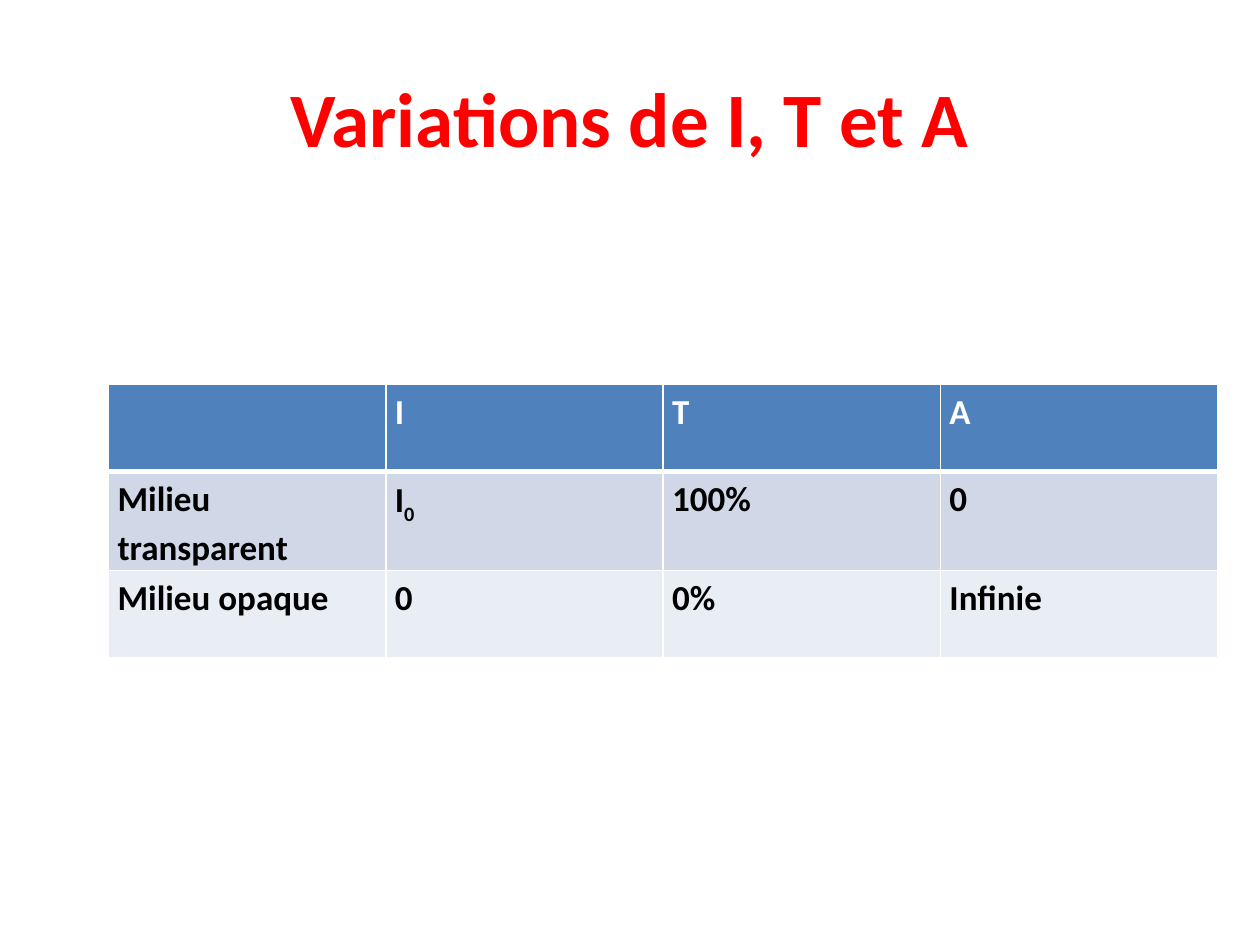
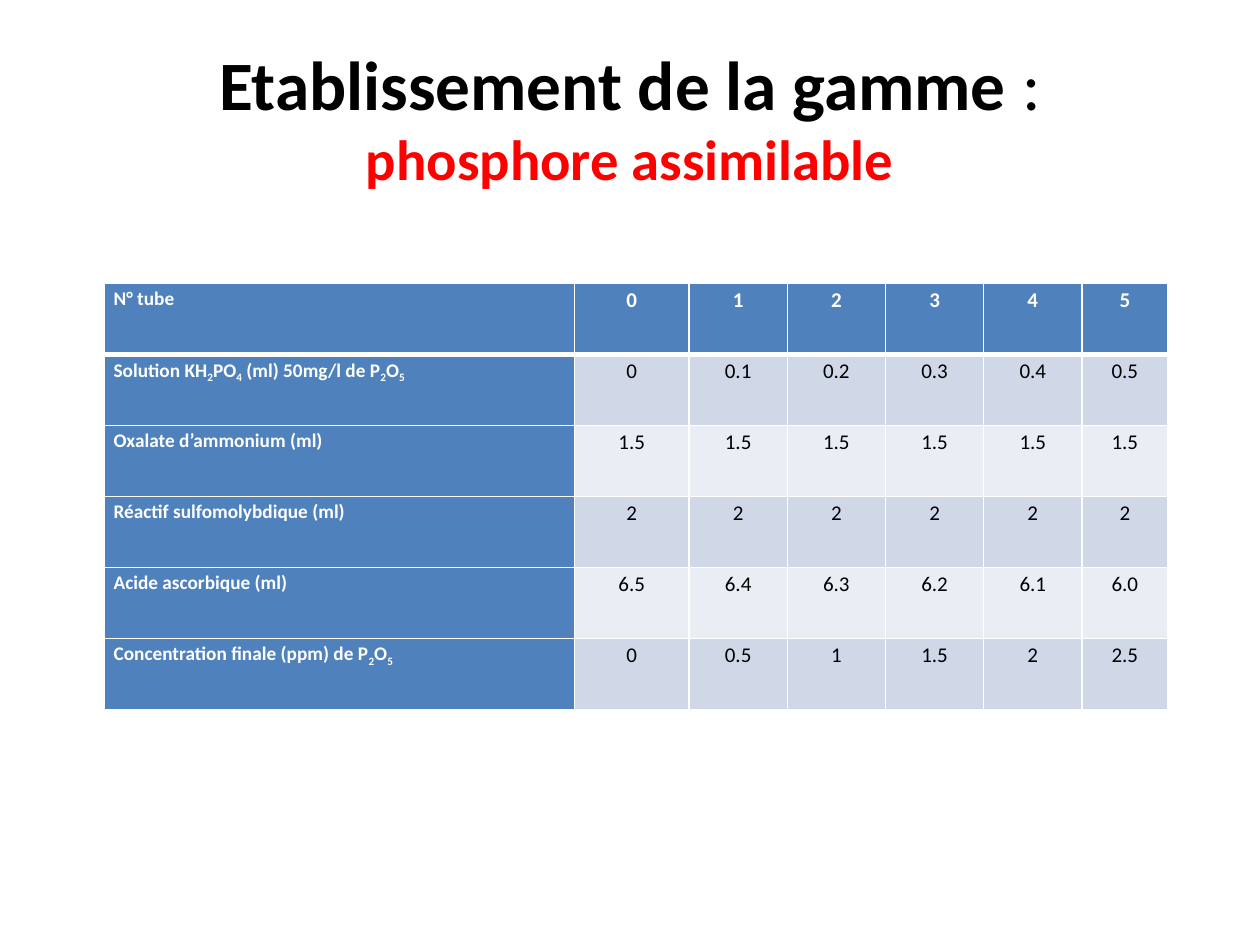
import copy

import pptx
import pptx.dml.color
import pptx.enum.text
import pptx.oxml
import pptx.oxml.ns
import pptx.util

Cm, Pt = pptx.util.Cm, pptx.util.Pt
ALIGN = pptx.enum.text.PP_ALIGN

# Shared look
FONT = "Calibri"
COLORS = {"red": "FF0000", "black": "000000", "white": "FFFFFF",
          "header": "4F81BD", "odd": "D0D8E8", "even": "E9EDF4"}
TITLE_BOX = (1.27, 0.76, 22.86, 3.18)  # left, top, width, height in cm

# Content: title lines hold (text, size, colour, bold) runs;
# in table text, "_" lowers the character that follows it
SLIDES = [
    {
        "title": [[("Variations de I, T et A", 44, "red", True)]],
        "rows": [
            ["", "I", "T", "A"],
            ["Milieu transparent", "I_0", "100%", "0"],
            ["Milieu opaque", "0", "0%", "Infinie"],
        ],
        "origin": (2.19, 7.75),
        "widths": [5.59] * 4,
        "row_height": 1.76,
        "label_size": 20, "value_size": 20,
        "label_column": False, "bold_values": True,
        "value_align": ALIGN.LEFT, "space_after": 0,
    },
    {
        "title": [
            [("Etablissement de la gamme", 39.6, "black", True),
             (" :", 39.6, "black", False)],
            [("phosphore assimilable", 32.4, "red", True)],
        ],
        "rows": [
            ["N° tube", "0", "1", "2", "3", "4", "5"],
            ["Solution KH_2PO_4 (ml) 50mg/l de P_2O_5",
             "0", "0.1", "0.2", "0.3", "0.4", "0.5"],
            ["Oxalate d’ammonium (ml)"] + ["1.5"] * 6,
            ["Réactif sulfomolybdique (ml)"] + ["2"] * 6,
            ["Acide ascorbique (ml)", "6.5", "6.4", "6.3", "6.2", "6.1", "6.0"],
            ["Concentration finale (ppm) de P_2O_5",
             "0", "0.5", "1", "1.5", "2", "2.5"],
        ],
        "origin": (2.11, 5.72),
        "widths": [9.47, 2.31] + [1.98] * 4 + [1.73],
        "row_height": 1.43,
        "label_size": 11, "value_size": 12,
        "label_column": True, "bold_values": False,
        "value_align": ALIGN.CENTER, "space_after": 10,
    },
]


def rgb(name):
    return pptx.dml.color.RGBColor.from_string(COLORS[name])


def add_run(p, text, size, color, bold):
    r = p.add_run()
    r.text = text
    r.font.name, r.font.size, r.font.bold = FONT, Pt(size), bold
    r.font.color.rgb = rgb(color)
    return r


def add_title(slide, lines):
    sp = slide.shapes.title
    sp.left, sp.top, sp.width, sp.height = map(Cm, TITLE_BOX)
    tf = sp.text_frame
    tf.auto_size = pptx.enum.text.MSO_AUTO_SIZE.NONE
    tf.vertical_anchor = pptx.enum.text.MSO_ANCHOR.MIDDLE
    p = tf.paragraphs[0]
    p.alignment = ALIGN.CENTER
    for i, line in enumerate(lines):
        if i:
            # The break takes the size of the line it ends
            p.add_line_break()
            p._p[-1].append(copy.deepcopy(r._r.rPr))
        for run in line:
            r = add_run(p, *run)


def set_border(cell, side, width):
    cell._tc.get_or_add_tcPr().append(pptx.oxml.parse_xml(
        f'<a:ln{side} {pptx.oxml.ns.nsdecls("a")} w="{Pt(width)}"><a:solidFill>'
        f'<a:srgbClr val="{COLORS["white"]}"/></a:solidFill></a:ln{side}>'))


def add_cell_text(p, text, size, color, bold):
    for i, part in enumerate(text.split("_")):
        if i:
            r = add_run(p, part[0], size, color, bold)
            r.font._element.set("baseline", "-25000")
            part = part[1:]
        if part:
            add_run(p, part, size, color, bold)


def fill_cell(cell, text, row, col, data):
    header = row == 0 or (col == 0 and data["label_column"])
    # White rules, thicker under the header row
    for side, width in (("L", 1), ("R", 1), ("T", 3 if row == 1 else 1),
                        ("B", 3 if row == 0 else 1)):
        set_border(cell, side, width)
    cell.fill.solid()
    cell.fill.fore_color.rgb = rgb("header" if header else
                                   "odd" if row % 2 else "even")
    cell.margin_left = cell.margin_right = Cm(0.18)
    cell.margin_top = cell.margin_bottom = 0
    p = cell.text_frame.paragraphs[0]
    p.alignment = data["value_align"] if col else ALIGN.LEFT
    p.line_spacing = 1.15
    p.space_after = Pt(data["space_after"])
    add_cell_text(p, text, data["value_size" if col else "label_size"],
                  "white" if header else "black",
                  header or data["bold_values"])


def add_data_table(slide, data):
    rows, widths = data["rows"], data["widths"]
    left, top = data["origin"]
    height = data["row_height"]
    table = slide.shapes.add_table(
        len(rows), len(widths), Cm(left), Cm(top),
        Cm(sum(widths)), Cm(height * len(rows))).table
    for column, width in zip(table.columns, widths):
        column.width = Cm(width)
    for i, texts in enumerate(rows):
        table.rows[i].height = Cm(height)
        for j, text in enumerate(texts):
            fill_cell(table.cell(i, j), text, i, j, data)


def main():
    prs = pptx.Presentation()
    prs.slide_width, prs.slide_height = Cm(25.4), Cm(19.05)
    for data in SLIDES:
        slide = prs.slides.add_slide(prs.slide_layouts[5])  # title only
        add_title(slide, data["title"])
        add_data_table(slide, data)
    prs.save("out.pptx")


if __name__ == "__main__":
    main()
